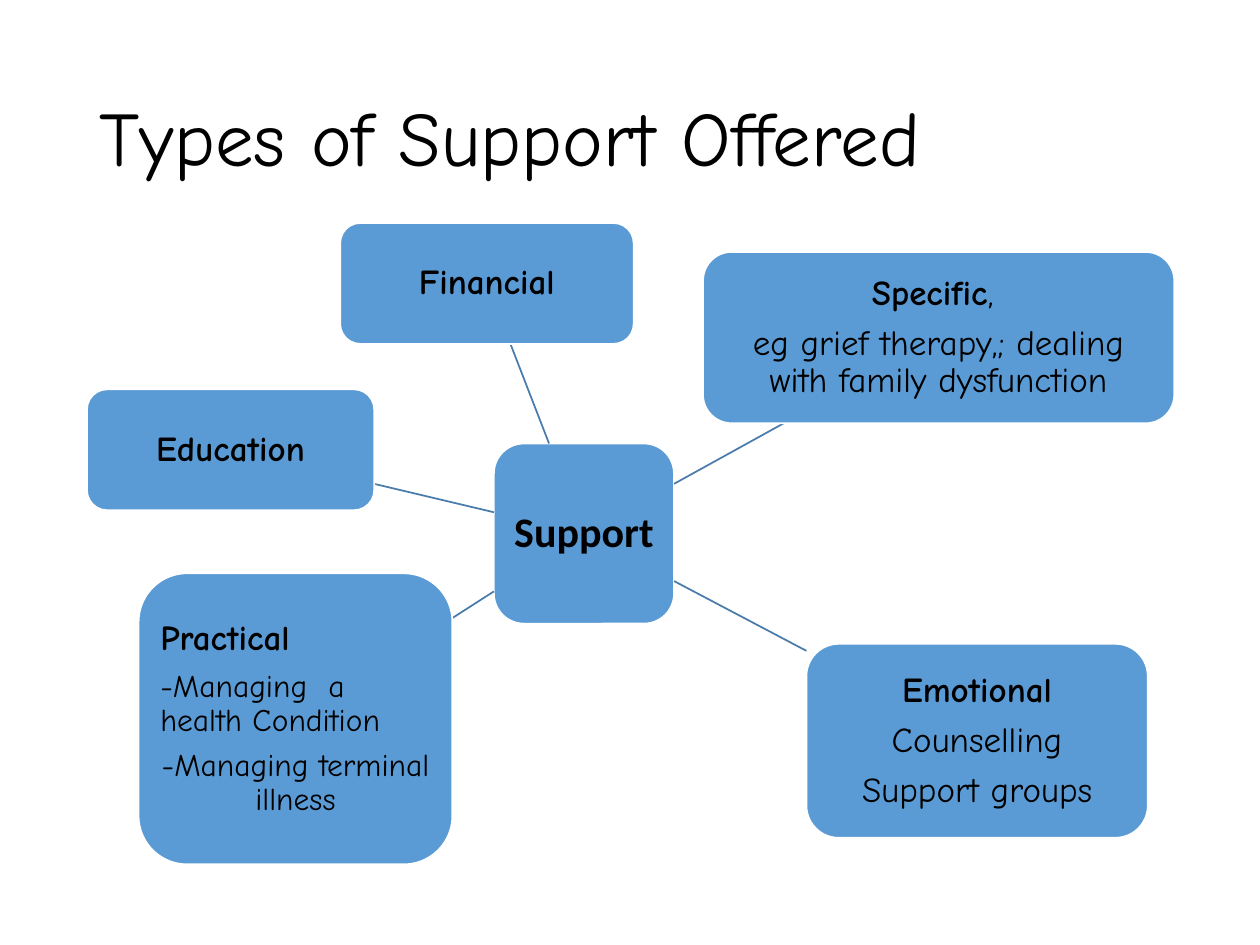
import pptx
import pptx.util
import pptx.dml.color
import pptx.enum.shapes
import pptx.enum.text
import pptx.oxml.ns
import lxml.etree

Inch, Pt = pptx.util.Inches, pptx.util.Pt
Align = pptx.enum.text.PP_ALIGN

TITLE = "Types of Support Offered"
HUB = ((3.92, 3.52, 1.43, 1.43), "Support")
NODES = [
    ((2.7, 1.77, 2.33, 0.96), "Financial", "", []),
    ((5.58, 2, 3.74, 1.36), "Specific", ", ",
     [("eg grief therapy,; dealing with family dysfunction", {})]),
    ((6.4, 5.11, 2.71, 1.54), "Emotional", "",
     [("Counselling", {}), ("Support groups", {})]),
    ((1.1, 4.55, 2.49, 2.31), "Practical", "",
     [("-Managing  a health Condition", {"size": 18, "align": Align.LEFT}),
      ("-Managing terminal illness", {"size": 18})]),
    ((0.69, 3.09, 2.28, 0.96), "Education", "", []),
]
LEFT = {"Practical"}


def color(code):
    return pptx.dml.color.RGBColor.from_string(code)


def write(para, text, size=20, bold=False, font="Comic Neue",
          align=Align.CENTER, gap=0.35):
    para.alignment = align
    para.line_spacing = 0.9
    para.space_after = Pt(size * gap)
    run = para.add_run()
    run.text = text
    run.font.size = Pt(size)
    run.font.bold = bold
    run.font.name = font
    run.font.color.rgb = color("000000")


def box(slide, area, inset):
    kind = pptx.enum.shapes.MSO_SHAPE.ROUNDED_RECTANGLE
    shape = slide.shapes.add_shape(kind, *map(Inch, area))
    shape.shadow.inherit = False
    shape.fill.solid()
    shape.fill.fore_color.rgb = color("5B9BD5")
    shape.line.color.rgb = color("FFFFFF")
    shape.line.width = Pt(1)
    frame = shape.text_frame
    frame.word_wrap = True
    frame.vertical_anchor = pptx.enum.text.MSO_ANCHOR.MIDDLE
    frame.margin_left = frame.margin_right = Inch(inset)
    frame.margin_top = frame.margin_bottom = Inch(inset)
    return frame


def center(area):
    x, y, w, h = area
    return x + w / 2, y + h / 2


def edge(area, goal):
    x, y = center(area)
    dx, dy = goal[0] - x, goal[1] - y
    part = min(area[2] / 2 / abs(dx), area[3] / 2 / abs(dy))
    return x + dx * part, y + dy * part


def spoke(slide, start, end):
    ends = edge(start, center(end)) + edge(end, center(start))
    kind = pptx.enum.shapes.MSO_CONNECTOR.STRAIGHT
    line = slide.shapes.add_connector(kind, *map(Inch, ends))
    line.line.color.rgb = color("497CAB")
    line.line.width = Pt(1)
    props = line._element.spPr
    lxml.etree.SubElement(props, pptx.oxml.ns.qn("a:effectLst"))


def main():
    deck = pptx.Presentation()
    deck.slide_width, deck.slide_height = Inch(10), Inch(7.5)
    slide = deck.slides.add_slide(deck.slide_layouts[5])

    title = slide.shapes.title
    title.left, title.top = Inch(0.69), Inch(0.4)
    title.width, title.height = Inch(8.62), Inch(1.45)
    title.text_frame.vertical_anchor = pptx.enum.text.MSO_ANCHOR.MIDDLE
    write(title.text_frame.paragraphs[0], TITLE, size=44,
          align=Align.LEFT, gap=0)

    hub, name = HUB
    frame = box(slide, hub, 0.07)
    write(frame.paragraphs[0], name, size=24, bold=True, font="Calibri")

    for area, head, tail, lines in NODES:
        spoke(slide, hub, area)
        frame = box(slide, area, 0.06)
        side = Align.LEFT if head in LEFT else Align.CENTER
        write(frame.paragraphs[0], head, bold=True, align=side)
        if tail:
            write(frame.paragraphs[0], tail, align=side)
        for text, style in lines:
            write(frame.add_paragraph(), text, **style)

    deck.save("out.pptx")


if __name__ == "__main__":
    main()
